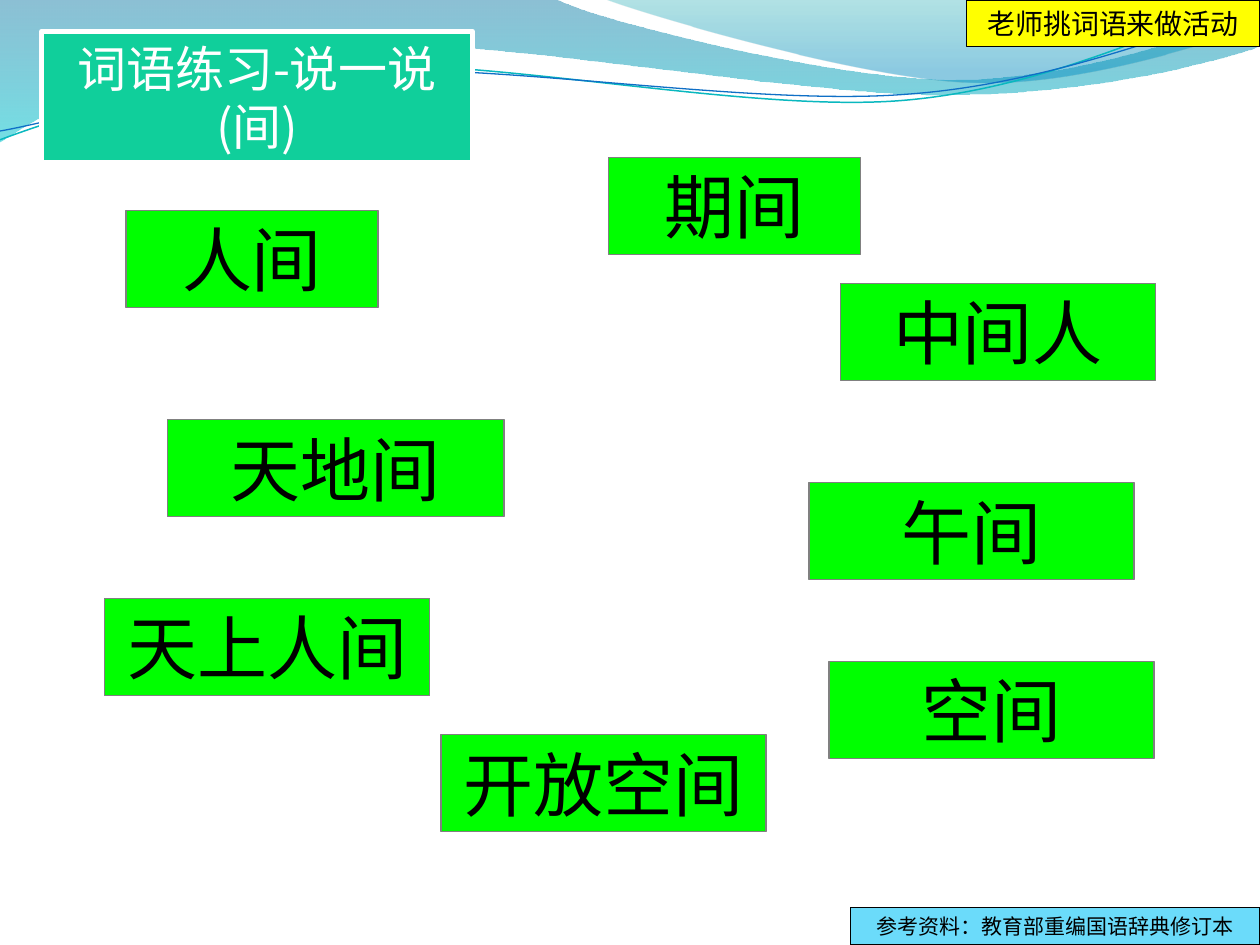
from math import cos, radians, sin

from lxml.etree import SubElement
from pptx import Presentation
from pptx.dml.color import RGBColor
from pptx.enum.shapes import MSO_SHAPE as Shape
from pptx.enum.text import MSO_ANCHOR as Anchor, MSO_AUTO_SIZE as AutoSize, PP_ALIGN as Align
from pptx.oxml.ns import qn
from pptx.util import Inches, Pt


def colour(code):
    return RGBColor.from_string(code)


def pairs(values):
    return list(zip(values[::2], values[1::2]))


class SlideBuilder:
    font = "Noto Sans CJK SC"

    def __init__(self, slide):
        self.slide = slide

    def outline(self, place, segments, close, angle=0):
        """Draw a move, then lines (two values) and Bezier curves (six values)."""
        left, top, width, height = place
        middle_x, middle_y = left + width / 2, top + height / 2
        turn_cos, turn_sin = cos(radians(-angle)), sin(radians(-angle))

        def local(point):
            """Undo the shape's rotation and measure from its corner."""
            dx, dy = point[0] - middle_x, point[1] - middle_y
            return (Inches(dx * turn_cos - dy * turn_sin + width / 2),
                    Inches(dx * turn_sin + dy * turn_cos + height / 2))

        steps = [[local(point) for point in pairs(segment)] for segment in segments]
        builder = self.slide.shapes.build_freeform(*steps[0][-1])
        builder.add_line_segments([step[-1] for step in steps[1:]], close=close)
        shape = builder.convert_to_shape()
        shape.left, shape.top, shape.width, shape.height = map(Inches, place)
        shape.rotation = angle
        shape.shadow.inherit = False

        route = next(shape.element.spPr.iter(qn("a:path")))
        route.set("w", str(Inches(width)))
        route.set("h", str(Inches(height)))
        for node, step in zip(list(route), steps):
            for old in list(node):
                node.remove(old)
            if len(step) == 3:
                node.tag = qn("a:cubicBezTo")
            for x, y in step:
                SubElement(node, qn("a:pt"), x=str(x), y=str(y))
        return shape

    def wave(self, place, segments, stops):
        """Draw a filled wave; stops are (position, colour, opacity percent)."""
        shape = self.outline(place, segments, close=True)
        shape.line.fill.background()
        shape.fill.gradient()
        shape.fill.gradient_angle = 270
        for stop, (position, code, _) in zip(shape.fill.gradient_stops, stops):
            stop.position = position
            stop.color.rgb = colour(code)
        for node, (_, _, opacity) in zip(shape.element.spPr.iter(qn("a:srgbClr")), stops):
            SubElement(node, qn("a:alpha"), val=str(opacity * 1000))

    def strand(self, place, segments, code, width):
        shape = self.outline(place, segments, close=False, angle=357.3)
        shape.fill.background()
        shape.line.color.rgb = colour(code)
        shape.line.width = Pt(width)

    def box(self, text, place, size, fill, line="000000", width=0.75, ink="000000"):
        box = self.slide.shapes.add_shape(Shape.RECTANGLE, *map(Inches, place))
        box.shadow.inherit = False
        box.fill.solid()
        box.fill.fore_color.rgb = colour(fill)
        box.line.color.rgb = colour(line)
        box.line.width = Pt(width)
        frame = box.text_frame
        frame.text = text
        frame.word_wrap = True
        frame.auto_size = AutoSize.SHAPE_TO_FIT_TEXT
        frame.vertical_anchor = Anchor.MIDDLE
        para = frame.paragraphs[0]
        para.alignment = Align.CENTER
        span = para.runs[0]
        span.font.size = Pt(size)
        span.font.color.rgb = colour(ink)
        span.font.name = self.font
        SubElement(span.font._element, qn("a:ea"), typeface=self.font)


def main():
    deck = Presentation()
    deck.slide_width, deck.slide_height = Inches(10), Inches(7.5)
    page = SlideBuilder(deck.slides.add_slide(deck.slide_layouts[6]))

    page.wave((-0.01, -0.01, 10.02, 1.14), [
        (0, 0), (4.4, -0.01), (4.76, 0.17, 6.64, 0.63, 7.58, 0.63),
        (8.53, 0.63, 9.58, 0.26, 10, 0.09), (10.01, 0.36),
        (9.83, 0.44, 8.7, 0.76, 7.46, 0.75), (6.22, 0.75, 3.82, 0.28, 2.57, 0.34),
        (1.29, 0.36, 0.46, 0.83, -0.01, 1.13), (0, 0),
    ], [(0, "0074A1", 45), (1, "00C6CF", 55)])
    page.wave((4.79, -0.01, 5.21, 0.7), [
        (4.79, -0.01), (5.09, 0.11, 6.82, 0.62, 7.69, 0.65),
        (8.56, 0.69, 9.61, 0.32, 10, 0.21), (10, 0), (4.79, -0.01),
    ], [(0, "00A1A9", 30), (0.8, "008BBF", 45)])
    page.strand((-0.02, 0.22, 10.02, 0.71), [
        (0, 1.11), (0.48, 0.93, 1.58, 0.57, 2.77, 0.52),
        (3.95, 0.47, 5.93, 0.89, 7.13, 0.8), (8.33, 0.71, 9.38, 0.15, 9.98, -0.02),
    ], "0AB8BF", 0.85)
    page.strand((-0.02, 0.3, 10.03, 0.58), [
        (0, 1.04), (0.47, 0.96, 1.64, 0.61, 2.83, 0.56),
        (4.03, 0.51, 5.97, 0.84, 7.17, 0.75), (8.36, 0.67, 9.41, 0.21, 10, 0.06),
    ], "0F6FC6", 0.75)

    words = [
        ("中间人", 6.67, 2.25, 2.5), ("天上人间", 0.83, 4.75, 2.58),
        ("人间", 1, 1.67, 2), ("天地间", 1.33, 3.33, 2.67),
        ("空间", 6.58, 5.25, 2.58), ("开放空间", 3.5, 5.83, 2.58),
        ("期间", 4.83, 1.25, 2), ("午间", 6.42, 3.83, 2.58),
    ]
    for word, left, top, width in words:
        page.box(word, (left, top, width, 0.77), 40, "00FF00", "808080")

    page.box("词语练习-说一说(间)", (0.33, 0.25, 3.42, 1.04), 28,
             "10CF9B", "FFFFFF", 3, "FFFFFF")
    page.box("参考资料：教育部重编国语辞典修订本", (6.75, 7.2, 3.25, 0.3), 12, "6BDBFA")
    page.box("老师挑词语来做活动", (7.67, 0, 2.33, 0.37), 16, "FFFF00")
    deck.save("out.pptx")


if __name__ == "__main__":
    main()
